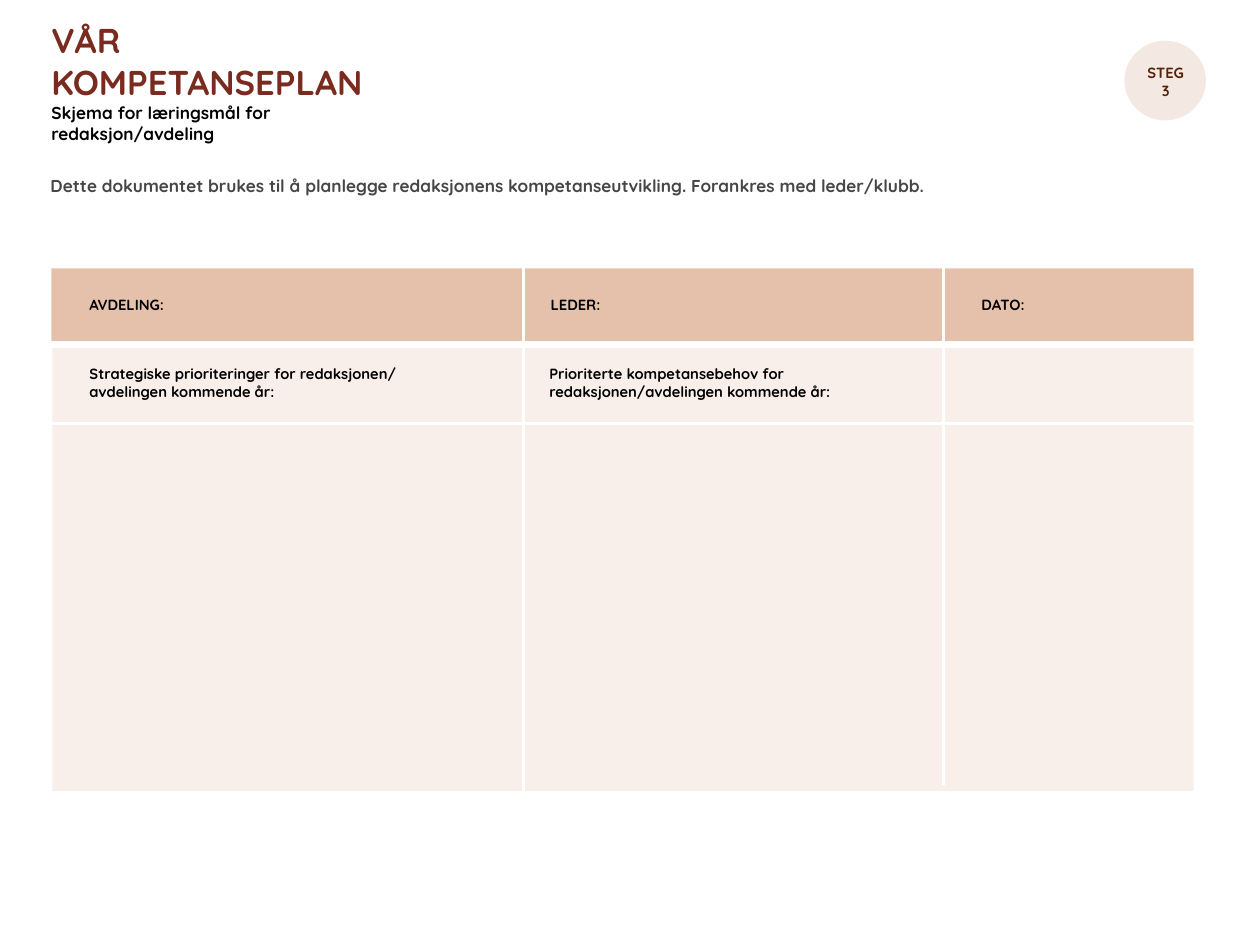
from lxml.etree import SubElement
from pptx import Presentation
from pptx.dml.color import RGBColor
from pptx.enum.shapes import MSO_CONNECTOR, MSO_SHAPE
from pptx.enum.text import MSO_ANCHOR, PP_ALIGN
from pptx.oxml.ns import qn
from pptx.util import Inches, Pt

BLACK = "000000"
WHITE = "FFFFFF"
INSET = 0.06


def rgb(hex_string):
    """Turn a hex string into a colour."""
    return RGBColor.from_string(hex_string)


def add_text(slide, box, paragraphs, align=PP_ALIGN.LEFT, anchor=MSO_ANCHOR.MIDDLE):
    """Write (text, size, colour) paragraphs into a text box."""
    frame = slide.shapes.add_textbox(*map(Inches, box)).text_frame
    settings = {"word_wrap": True, "vertical_anchor": anchor}
    settings |= {f"margin_{side}": Inches(INSET) for side in ("left", "top", "right", "bottom")}
    for name, value in settings.items():
        setattr(frame, name, value)
    for index, (text, size, colour) in enumerate(paragraphs):
        paragraph = frame.add_paragraph() if index else frame.paragraphs[0]
        paragraph.text = text
        paragraph.alignment = align
        for name, value in {"name": "Quicksand", "size": Pt(size), "bold": True}.items():
            setattr(paragraph.font, name, value)
        paragraph.font.color.rgb = rgb(colour)


def add_area(slide, kind, box, colour, opacity=100):
    """Draw a borderless filled shape."""
    area = slide.shapes.add_shape(kind, *map(Inches, box))
    area.shadow.inherit = False
    area.line.fill.background()
    area.fill.solid()
    area.fill.fore_color.rgb = rgb(colour)
    if opacity < 100:
        tint = area.fill._xPr.find(qn("a:solidFill"))[0]
        SubElement(tint, qn("a:alpha"), val=str(opacity * 1000))


def add_divider(slide, start, end):
    """Draw a white dividing line."""
    divider = slide.shapes.add_connector(
        MSO_CONNECTOR.STRAIGHT, *map(Inches, (*start, *end)))
    divider.line.color.rgb = rgb(WHITE)
    divider.line.width = Pt(2)
    SubElement(divider._element.spPr, qn("a:effectLst"))


def add_heading(slide, left, top):
    """Place the title, subtitle and introduction."""
    add_text(slide, (left, top, 4.46, 0.82), [
        ("VÅR KOMPETANSEPLAN", 28, "7A2B1F"),
        ("Skjema for læringsmål for redaksjon/avdeling", 14, BLACK),
    ])
    introduction = ("Dette dokumentet brukes til å planlegge redaksjonens "
                    "kompetanseutvikling. Forankres med leder/klubb.")
    add_text(slide, (left - 0.01, top + 1.41, 10.11, 0.35),
             [(introduction, 14, "464646")], anchor=MSO_ANCHOR.TOP)


def add_step_badge(slide, left, top):
    """Place the round step marker."""
    add_area(slide, MSO_SHAPE.OVAL, (left, top, 0.92, 0.9), "F3E9E2")
    add_text(slide, (left + 0.14, top + 0.3, 0.65, 0.32),
             [("STEG 3", 12, "55220A")], PP_ALIGN.CENTER)


def add_form(slide, left, top, width):
    """Place the form's header band, body, dividers and labels."""
    body_top = top + 0.9
    leader_edge, date_edge = left + 5.33, left + 10.07
    add_area(slide, MSO_SHAPE.RECTANGLE, (left, top, width, 0.82), "E5C1AC")
    add_area(slide, MSO_SHAPE.RECTANGLE,
             (left + 0.01, body_top, width - 0.01, 5), "F5E9E1", 69)

    for edge, body_start, body_end in ((leader_edge, 3.88, 8.97), (date_edge, 3.77, 8.86)):
        add_divider(slide, (edge, body_top - 0.01), (edge, top - 0.07))
        add_divider(slide, (edge, body_end), (edge, body_start))
    add_divider(slide, (left + width + 0.09, top + 1.75), (left - 0.08, top + 1.75))

    department_left, leader_left, date_left = left + 0.37, left + 5.56, left + 10.4
    header_top, question_top = top + 0.19, body_top + 0.04
    labels = (
        ("AVDELING:", (department_left, header_top, 2.7, 0.43), PP_ALIGN.LEFT),
        ("LEDER:", (leader_left, header_top, 0.71, 0.43), PP_ALIGN.CENTER),
        ("DATO:", (date_left, header_top, 0.68, 0.43), PP_ALIGN.CENTER),
        ("Strategiske prioriteringer for redaksjonen/ \vavdelingen kommende år:",
         (department_left, question_top, 4.59, 0.7), PP_ALIGN.LEFT),
        ("Prioriterte kompetansebehov for redaksjonen/avdelingen kommende år:",
         (leader_left, question_top, 4.33, 0.7), PP_ALIGN.LEFT),
    )
    for text, box, align in labels:
        add_text(slide, box, [(text, 12, BLACK)], align)


def main():
    """Build and save the competence plan."""
    deck = Presentation()
    deck.slide_width, deck.slide_height = Inches(14.22), Inches(10.67)
    slide = deck.slides.add_slide(deck.slide_layouts[6])
    add_heading(slide, 0.52, 0.51)
    add_form(slide, 0.58, 3.03, 12.89)
    add_step_badge(slide, 12.69, 0.46)
    deck.save("out.pptx")


if __name__ == "__main__":
    main()
